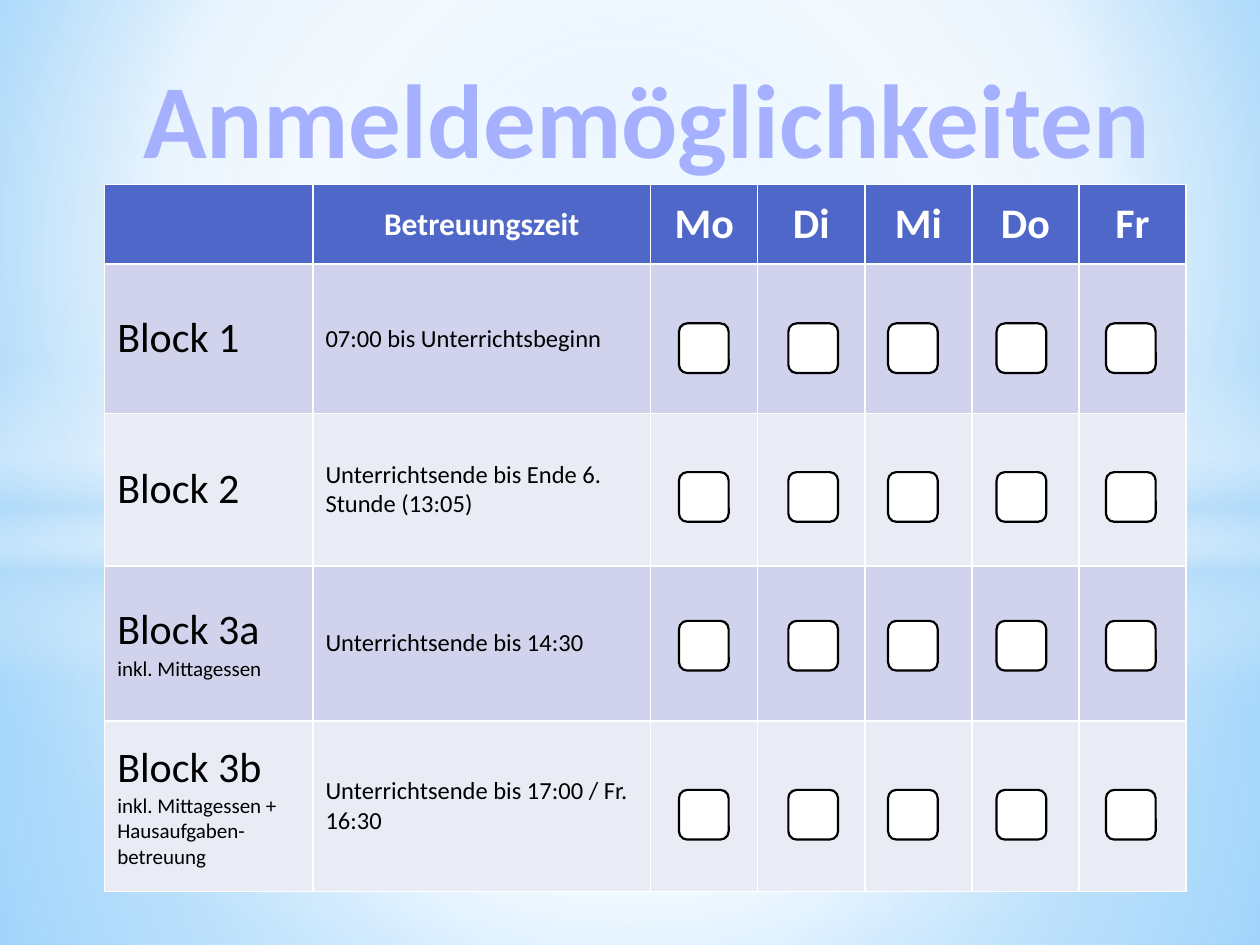
from lxml import etree
from pptx import Presentation
from pptx.dml.color import RGBColor
from pptx.enum.shapes import MSO_SHAPE
from pptx.enum.text import MSO_ANCHOR, PP_ALIGN
from pptx.oxml.ns import qn
from pptx.util import Pt

RECT, OVAL, ROUND = MSO_SHAPE.RECTANGLE, MSO_SHAPE.OVAL, MSO_SHAPE.ROUNDED_RECTANGLE
CENTER, LEFT, MIDDLE = PP_ALIGN.CENTER, PP_ALIGN.LEFT, MSO_ANCHOR.MIDDLE
TITLE_ONLY = 5

WHITE, BLACK, SKY = "FFFFFF", "000000", "B4DCFA"
HEADER_FILL, BAND_FILLS = "4E67C8", ("D0D3EB", "E9EBF5")
CENTRED = (50, 50, 50, 50)

# Kind, box, stops (position %, colour, opacity %), focus rectangle or None for vertical
GLOWS = [
    (RECT, (0, 304.5, 720, 235.5),
     [(0, WHITE, 91), (37, WHITE, 76), (100, SKY, 79)], CENTRED),
    (RECT, (0, 0, 720, 304.5),
     [(0, WHITE, 89), (48, WHITE, 62), (100, SKY, 79)], CENTRED),
    (RECT, (0, 209, 720, 180),
     [(0, WHITE, 0), (29, WHITE, 30), (45, SKY, 40), (55, WHITE, 26),
      (65, SKY, 60), (100, WHITE, 0)], None),
    (OVAL, (0, 126, 720, 402), [(0, WHITE, 100), (54, WHITE, 0)], CENTRED),
]
BACKDROP = [(0, "9ED5FF", 100), (60, WHITE, 100), (100, "5BB9FF", 100)]
TITLE_STOPS = [(0, "BCC4FF", 100), (9, "A5B0FF", 100), (50, "001C8A", 100),
               (79, "A5B0FF", 100), (100, "BCC4FF", 100)]

DAYS = ["Mo", "Di", "Mi", "Do", "Fr"]
BLOCKS = [
    ("Block 1", "", "07:00 bis Unterrichtsbeginn"),
    ("Block 2", "", "Unterrichtsende bis Ende 6. Stunde (13:05)"),
    ("Block 3a ", "inkl. Mittagessen", "Unterrichtsende bis 14:30"),
    ("Block 3b ", "inkl. Mittagessen + Hausaufgaben-betreuung",
     "Unterrichtsende bis 17:00 / Fr. 16:30"),
]
COLUMN_WIDTHS = [119, 193] + [61.2] * len(DAYS)
ROW_HEIGHTS = [45.4, 85.3, 87.2, 88.6, 97.4]
BOX_SIZE = 28.4
BOX_LEFTS = [388, 450.5, 507.5, 569.5, 632]
BOX_TOPS = [184.8, 269.8, 354.8, 451.4]


def rgb(hex_colour):
    return RGBColor.from_string(hex_colour)


def child(parent, tag, **attributes):
    return etree.SubElement(parent, qn(tag), {k: str(v) for k, v in attributes.items()})


def set_gradient(fill, owner, stops, focus=None):
    """Give fill, found inside the XML element owner, a radial or vertical gradient."""
    fill.gradient()
    gradient = owner.find(".//" + qn("a:gradFill"))
    for part in list(gradient):
        gradient.remove(part)
    stop_list = child(gradient, "a:gsLst")
    for position, colour, opacity in stops:
        stop = child(stop_list, "a:gs", pos=position * 1000)
        colour_node = child(stop, "a:srgbClr", val=colour)
        if opacity < 100:
            child(colour_node, "a:alpha", val=opacity * 1000)
    if focus:
        circle = child(gradient, "a:path", path="circle")
        child(circle, "a:fillToRect", **{s: v * 1000 for s, v in zip("ltrb", focus)})
    else:
        child(gradient, "a:lin", ang=5400000, scaled=0)


class SlideBuilder:
    font = {"name": "Calibri", "bold": False}

    def __init__(self, slide):
        self.slide = slide

    def backdrop(self, stops, focus):
        set_gradient(self.slide.background.fill, self.slide.element, stops, focus)

    def shape(self, kind, box):
        shape = self.slide.shapes.add_shape(kind, *map(Pt, box))
        shape.shadow.inherit = False
        return shape

    def glow(self, kind, box, stops, focus):
        glow = self.shape(kind, box)
        set_gradient(glow.fill, glow.element.spPr, stops, focus)
        glow.line.fill.background()

    def checkbox(self, left, top):
        checkbox = self.shape(ROUND, (left, top, BOX_SIZE, BOX_SIZE))
        checkbox.fill.solid()
        checkbox.fill.fore_color.rgb = rgb(WHITE)
        checkbox.line.color.rgb = rgb(BLACK)
        checkbox.line.width = Pt(1.25)

    def run(self, paragraph, text, size, **changes):
        run = paragraph.add_run()
        run.text = text
        for attribute, value in {**self.font, "size": Pt(size), **changes}.items():
            setattr(run.font, attribute, value)
        return run

    def title(self, text, box):
        title = self.slide.shapes.title
        for side, length in zip(("left", "top", "width", "height"), box):
            setattr(title, side, Pt(length))
        title.text_frame.word_wrap = True
        title.text_frame.vertical_anchor = MIDDLE
        paragraph = title.text_frame.paragraphs[0]
        paragraph.alignment = CENTER
        properties = paragraph._p.get_or_add_pPr()
        properties.set("marL", str(Pt(14.4)))
        properties.set("indent", "0")
        run = self.run(paragraph, text, 60, bold=True)
        set_gradient(run.font.fill, run._r, TITLE_STOPS)
        outline = etree.Element(qn("a:ln"), w=str(Pt(0.83)))
        child(child(outline, "a:solidFill"), "a:srgbClr", val="445EC3")
        run._r.rPr.insert(0, outline)
        title.element.getparent().append(title.element)  # in front of the glows

    def table(self, left, top, widths, heights):
        frame = self.slide.shapes.add_table(
            len(heights), len(widths), Pt(left), Pt(top), Pt(sum(widths)), Pt(sum(heights)))
        for column, width in zip(frame.table.columns, widths):
            column.width = Pt(width)
        for row, height in zip(frame.table.rows, heights):
            row.height = Pt(height)
        return frame.table

    def cell(self, cell, fill, runs=(), colour=BLACK, align=LEFT, bold=False):
        cell.fill.solid()
        cell.fill.fore_color.rgb = rgb(fill)
        cell.vertical_anchor = MIDDLE
        paragraph = cell.text_frame.paragraphs[0]
        paragraph.alignment = align
        for text, size in runs:
            if text:
                self.run(paragraph, text, size, bold=bold).font.color.rgb = rgb(colour)


def main():
    deck = Presentation()
    deck.slide_width, deck.slide_height = Pt(720), Pt(540)
    builder = SlideBuilder(deck.slides.add_slide(deck.slide_layouts[TITLE_ONLY]))

    builder.backdrop(BACKDROP, (20, 10, 20, 60))
    for glow in GLOWS:
        builder.glow(*glow)
    builder.title("Anmeldemöglichkeiten", (25, 21, 675, 91))

    schedule = builder.table(59.8, 105.5, COLUMN_WIDTHS, ROW_HEIGHTS)
    headings = [("", 18), ("Betreuungszeit", 18)] + [(day, 24) for day in DAYS]
    for column, heading in enumerate(headings):
        builder.cell(schedule.cell(0, column), HEADER_FILL, [heading], WHITE, CENTER, True)
    for row, (block, extra, hours) in enumerate(BLOCKS, start=1):
        contents = [[(block, 24), (extra, 12)], [(hours, 14)]] + [[]] * len(DAYS)
        for column, runs in enumerate(contents):
            builder.cell(schedule.cell(row, column), BAND_FILLS[(row - 1) % 2], runs)

    for top in BOX_TOPS:
        for left in BOX_LEFTS:
            builder.checkbox(left, top)
    deck.save("out.pptx")


if __name__ == "__main__":
    main()
